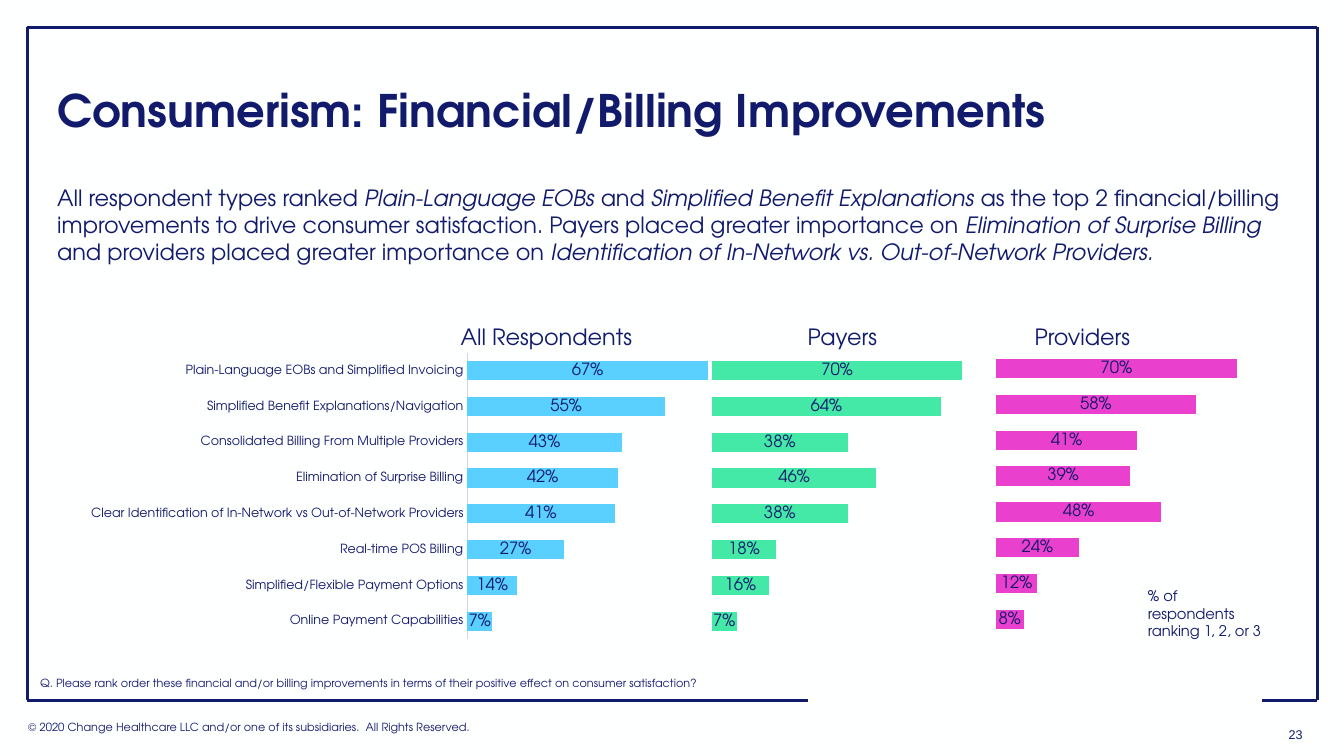
from lxml import etree
from pptx import Presentation
from pptx.chart.data import CategoryChartData
from pptx.dml.color import RGBColor
from pptx.enum.chart import XL_CHART_TYPE as ChartType, XL_LABEL_POSITION as LabelPos
from pptx.enum.chart import XL_TICK_MARK as Tick
from pptx.enum.shapes import MSO_CONNECTOR as Connector
from pptx.enum.text import MSO_ANCHOR as Anchor, PP_ALIGN as Align
from pptx.oxml.ns import qn
from pptx.util import Cm, Pt

# Content
FONT, NAVY, AXIS = "TeX Gyre Adventor", "121A6C", "CED1F7"
TITLE = "Consumerism: Financial/Billing Improvements"
SUMMARY = [  # text, italic
    ("All respondent types ranked ", False),
    ("Plain-Language EOBs ", True),
    ("and ", False),
    ("Simplified Benefit Explanations", True),
    (" as the top 2 financial/billing improvements to drive consumer satisfaction. "
     "Payers placed greater importance on ", False),
    ("Elimination of Surprise Billing", True),
    (" and providers placed greater importance on ", False),
    ("Identification of In-Network vs. Out-of-Network Providers.", True),
]
IMPROVEMENTS = {  # all respondents, payers, providers
    "Plain-Language EOBs and Simplified Invoicing": (0.67, 0.70, 0.70),
    "Simplified Benefit Explanations/Navigation": (0.55, 0.64, 0.58),
    "Consolidated Billing From Multiple Providers": (0.43, 0.38, 0.41),
    "Elimination of Surprise Billing": (0.42, 0.46, 0.39),
    "Clear Identification of In-Network vs Out-of-Network Providers": (0.41, 0.38, 0.48),
    "Real-time POS Billing": (0.27, 0.18, 0.24),
    "Simplified/Flexible Payment Options": (0.14, 0.16, 0.12),
    "Online Payment Capabilities": (0.07, 0.07, 0.08),
}
GROUPS = [  # name, heading left, colour, chart left, top, width, plot x and width share
    ("All Respondents", 11.18, "59D0FF", 1.93, 8.74, 19.3, 0.51, 0.47),
    ("Payers", 18.64, "45E9A7", 17.75, 8.74, 9.4, 0.02, 0.96),
    ("Providers", 24.69, "E940CD", 24.92, 8.69, 9.04, 0.02, 0.96),
]
BASE = "% of respondents ranking 1, 2, or 3"
QUESTION = ("Q. Please rank order these financial and/or billing improvements in terms of "
            "their positive effect on consumer satisfaction?")
COPYRIGHT = "© 2020 Change Healthcare LLC and/or one of its subsidiaries.  All Rights Reserved."

# Frame edges and the gap in its bottom side, in cm
LEFT, TOP, RIGHT, BOTTOM = 0.69, 0.69, 33.2, 17.65
GAP_START, GAP_END = 20.37, 31.8
FRAME = [
    (LEFT, TOP, RIGHT, TOP),
    (LEFT, TOP, LEFT, BOTTOM),
    (RIGHT, TOP, RIGHT, BOTTOM),
    (LEFT, BOTTOM, GAP_START, BOTTOM),
    (GAP_END, BOTTOM, RIGHT, BOTTOM),
]

prs = Presentation()
prs.slide_width, prs.slide_height = Cm(33.87), Cm(19.05)
s = prs.slides.add_slide(prs.slide_layouts[6])


def rgb(value):
    return RGBColor.from_string(value)


def style(font, size, name=FONT):
    font.size, font.name = Pt(size), name
    font.color.rgb = rgb(NAVY)


def add_text(text, x, y, w, h, size, name=FONT, bold=False, align=Align.LEFT,
             anchor=Anchor.TOP, spacing=None):
    """Text is a string or a list of (text, italic) pairs."""
    tf = s.shapes.add_textbox(Cm(x), Cm(y), Cm(w), Cm(h)).text_frame
    tf.word_wrap, tf.vertical_anchor = True, anchor
    p = tf.paragraphs[0]
    p.alignment, p.line_spacing = align, spacing
    for part, italic in [(text, False)] if isinstance(text, str) else text:
        r = p.add_run()
        r.text = part
        style(r.font, size, name)
        r.font.bold, r.font.italic = bold, italic


def add_line(x1, y1, x2, y2):
    line = s.shapes.add_connector(Connector.STRAIGHT, Cm(x1), Cm(y1), Cm(x2), Cm(y2))
    line.line.color.rgb, line.line.width = rgb(NAVY), Pt(2)
    etree.SubElement(line.element.spPr, qn("a:effectLst"))


def set_plot(chart, **shares):
    """Fix the inner plot area as shares of the chart frame."""
    plot_area = chart.element.find(".//" + qn("c:plotArea"))
    for old in plot_area.findall(qn("c:layout")):
        plot_area.remove(old)
    layout = etree.Element(qn("c:layout"))
    manual = etree.SubElement(layout, qn("c:manualLayout"))
    settings = {"layoutTarget": "inner", "xMode": "edge", "yMode": "edge", **shares}
    for tag, value in settings.items():
        etree.SubElement(manual, qn("c:" + tag)).set("val", str(value))
    plot_area.insert(0, layout)


def add_bars(name, values, color, x, y, w, plot_x, plot_w, show_names):
    data = CategoryChartData(number_format="0%")
    data.categories = list(IMPROVEMENTS)[::-1]
    data.add_series(name, values[::-1])
    chart = s.shapes.add_chart(ChartType.BAR_STACKED, Cm(x), Cm(y), Cm(w), Cm(7.52), data).chart
    style(chart.font, 12)
    chart.has_legend = chart.has_title = False
    set_plot(chart, x=plot_x, y=0.02, w=plot_w, h=0.96)

    val, cat = chart.value_axis, chart.category_axis
    val.minimum_scale, val.maximum_scale = 0, 1
    val.has_major_gridlines = val.visible = False
    cat.visible = show_names
    if show_names:
        cat.major_tick_mark = cat.minor_tick_mark = Tick.NONE
        style(cat.tick_labels.font, 9)
        cat.format.line.color.rgb, cat.format.line.width = rgb(AXIS), Pt(0.75)

    plot = chart.plots[0]
    plot.gap_width, plot.overlap, plot.vary_by_categories = 85, 100, False
    fill = plot.series[0].format.fill
    fill.solid()
    fill.fore_color.rgb = rgb(color)
    plot.has_data_labels = True
    labels = plot.data_labels
    labels.show_value, labels.position = True, LabelPos.CENTER
    labels.number_format, labels.number_format_is_linked = "0%", False
    style(labels.font, 12)


# Background, frame and footer
s.background.fill.solid()
s.background.fill.fore_color.rgb = rgb("FEFFFF")
for edge in FRAME:
    add_line(*edge)
add_text(COPYRIGHT, 0.46, 18.03, 16.56, 0.61, 8)
add_text("23", 32.13, 17.98, 1.04, 1.07, 9, name="Arial", align=Align.CENTER,
         anchor=Anchor.MIDDLE)

# Title and summary
add_text(TITLE, 1.19, 1.02, 31.5, 3.68, 32, bold=True, anchor=Anchor.MIDDLE, spacing=0.9)
add_text(SUMMARY, 1.19, 4.52, 31.5, 3, 16)

# One bar chart per group; only the first shows the names
for i, (name, head_x, color, x, y, w, plot_x, plot_w) in enumerate(GROUPS):
    values = [row[i] for row in IMPROVEMENTS.values()]
    add_bars(name, values, color, x, y, w, plot_x, plot_w, show_names=i == 0)
for name, head_x, *_ in GROUPS:
    add_text(name, head_x, 8.03, 5.18, 0.94, 16, align=Align.CENTER)

# Notes under the charts
add_text(BASE, 28.68, 14.66, 3.45, 1.6, 10.5)
add_text(QUESTION, 0.76, 16.92, 20.83, 0.61, 8)

prs.save("out.pptx")
